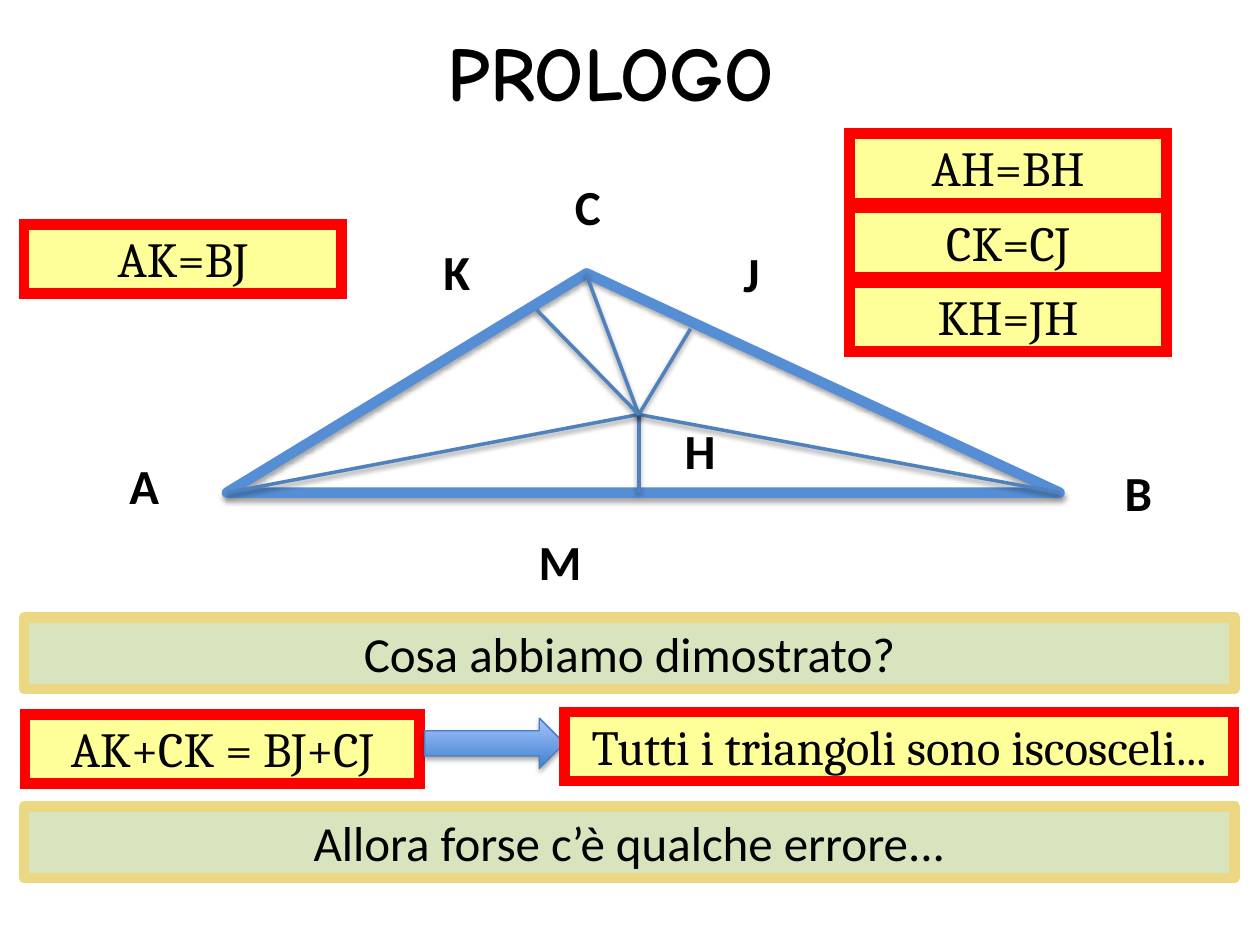
from lxml import etree
from pptx import Presentation
from pptx import util as u
from pptx.dml.color import RGBColor
from pptx.enum import shapes, text
from pptx.oxml import ns

BLACK = RGBColor(0x00, 0x00, 0x00)
INK = RGBColor(0x04, 0x04, 0x08)
RED = RGBColor(0xFF, 0x00, 0x00)
YELLOW = RGBColor(0xFF, 0xFF, 0x99)
GREEN = RGBColor(0xD7, 0xE4, 0xBD)
GOLD = RGBColor(0xEC, 0xD8, 0x82)
SIDE_BLUE = RGBColor(0x55, 0x8E, 0xD5)
SEGMENT_BLUE = RGBColor(0x4F, 0x81, 0xBD)
ARROW_EDGE = RGBColor(0x4B, 0x7E, 0xBC)
ARROW_DARK = RGBColor(0x3F, 0x80, 0xCE)
ARROW_LIGHT = RGBColor(0xA4, 0xC4, 0xFF)

BODY = {"name": "Calibri", "size": u.Pt(28), "color": BLACK}
LABEL = {**BODY, "bold": True}
FORMULA = {"name": "Cambria", "size": u.Pt(28), "color": INK}
HEADING = {"name": "Comic Neue", "size": u.Pt(44), "color": BLACK, "bold": True}


class Board:
    def __init__(self, slide):
        self.slide = slide
        self.items = slide.shapes

    def set_words(self, frame, words, font, anchor=text.MSO_ANCHOR.TOP, grow=False):
        fit = text.MSO_AUTO_SIZE
        settings = {"word_wrap": True, "vertical_anchor": anchor,
                    "auto_size": fit.SHAPE_TO_FIT_TEXT if grow else fit.NONE}
        for key, value in settings.items():
            setattr(frame, key, value)
        paragraph = frame.paragraphs[0]
        paragraph.alignment = text.PP_ALIGN.CENTER
        run = paragraph.add_run()
        run.text = words
        for key, value in font.items():
            if key == "color":
                run.font.color.rgb = value
            else:
                setattr(run.font, key, value)
        return paragraph

    def stroke(self, item, color, width, join=None):
        item.line.color.rgb = color
        item.line.width = u.Pt(width)
        if join:
            outline = item._element.spPr.find(ns.qn("a:ln"))
            etree.SubElement(outline, ns.qn(f"a:{join}"))

    def cast_shadow(self, item, opacity, distance):
        """Give the item a soft black shadow straight below it."""
        effects = etree.SubElement(item._element.spPr, ns.qn("a:effectLst"))
        shadow = etree.SubElement(
            effects, ns.qn("a:outerShdw"), blurRad=str(u.Pt(3.1)),
            dist=str(u.Pt(distance)), dir="5400000", rotWithShape="0")
        black = etree.SubElement(shadow, ns.qn("a:srgbClr"), val="000000")
        etree.SubElement(black, ns.qn("a:alpha"), val=str(opacity * 1000))

    def preset(self, kind, *box):
        return self.items.add_shape(kind, *map(u.Inches, box))

    def title(self, words, *box):
        title = self.items.title
        for key, value in zip(("left", "top", "width", "height"), box):
            setattr(title, key, u.Inches(value))
        paragraph = self.set_words(title.text_frame, words, HEADING,
                                   text.MSO_ANCHOR.MIDDLE)
        paragraph.line_spacing = 0.93

    def box(self, words, font, fill, edge, join, anchor, grow, *place):
        box = self.preset(shapes.MSO_SHAPE.RECTANGLE, *place)
        box.fill.solid()
        box.fill.fore_color.rgb = fill
        self.stroke(box, edge, 6, join)
        box.shadow.inherit = False
        self.set_words(box.text_frame, words, font, anchor, grow)

    def banner(self, words, top):
        self.box(words, BODY, GREEN, GOLD, "round", text.MSO_ANCHOR.TOP, True,
                 0.19, top, 9.61, 0.57)

    def formula(self, words, left, top, width=2.52):
        self.box(words, FORMULA, YELLOW, RED, "miter", text.MSO_ANCHOR.BOTTOM,
                 False, left, top, width, 0.55)

    def triangle(self, apex, *place):
        triangle = self.preset(shapes.MSO_SHAPE.ISOSCELES_TRIANGLE, *place)
        triangle.adjustments[0] = apex
        triangle.fill.background()
        self.stroke(triangle, SIDE_BLUE, 6, "round")
        self.cast_shadow(triangle, 35, 1.8)

    def segment(self, start, end):
        segment = self.items.add_connector(
            shapes.MSO_CONNECTOR.STRAIGHT, *map(u.Inches, start + end))
        self.stroke(segment, SEGMENT_BLUE, 2)
        self.cast_shadow(segment, 38, 1.6)

    def point_label(self, letter, left, top):
        label = self.items.add_textbox(*map(u.Inches, (left, top, 0.81, 0.57)))
        self.set_words(label.text_frame, letter, LABEL, grow=True)

    def arrow(self, *place):
        arrow = self.preset(shapes.MSO_SHAPE.RIGHT_ARROW, *place)
        arrow.fill.gradient()
        arrow.fill.gradient_angle = 90
        stops = arrow.fill.gradient_stops
        for stop, position, color in zip(stops, (0, 1), (ARROW_DARK, ARROW_LIGHT)):
            stop.position = position
            stop.color.rgb = color
        self.stroke(arrow, ARROW_EDGE, 0.75)
        self.cast_shadow(arrow, 35, 1.8)


def main():
    deck = Presentation()
    deck.slide_width, deck.slide_height = u.Inches(10), u.Inches(7.5)
    board = Board(deck.slides.add_slide(deck.slide_layouts[5]))

    board.title("PROLOGO", 0.9, 0.14, 7.89, 0.92)
    board.banner("Cosa abbiamo dimostrato?", 4.9)

    board.triangle(0.432, 1.8, 2.17, 6.61, 1.74)
    points = {"A": (1.8, 3.91), "B": (8.41, 3.91), "C": (4.65, 2.17),
              "M": (5.07, 3.91), "J": (5.48, 2.61), "K": (4.26, 2.46)}
    meeting_point = (5.07, 3.29)
    for name in "MCABJK":
        board.segment(points[name], meeting_point)
    labels = {"A": (0.74, 3.57), "C": (4.26, 1.35), "B": (8.63, 3.62),
              "H": (5.15, 3.29), "M": (4.04, 4.17), "J": (5.56, 1.88),
              "K": (3.22, 1.87)}
    for letter, place in labels.items():
        board.point_label(letter, *place)

    for row, equality in enumerate(("AH=BH", "CK=CJ", "KH=JH")):
        board.formula(equality, 6.74, 1.06 + row * 0.59)
    board.formula("AK=BJ", 0.19, 1.78)

    board.banner("Allora forse c’è qualche errore...", 6.4)
    board.formula("AK+CK = BJ+CJ", 0.2, 5.67, 3.13)
    board.arrow(3.37, 5.7, 1.11, 0.4)
    board.formula("Tutti i triangoli sono iscosceli...", 4.48, 5.65, 5.31)

    deck.save("out.pptx")


if __name__ == "__main__":
    main()
